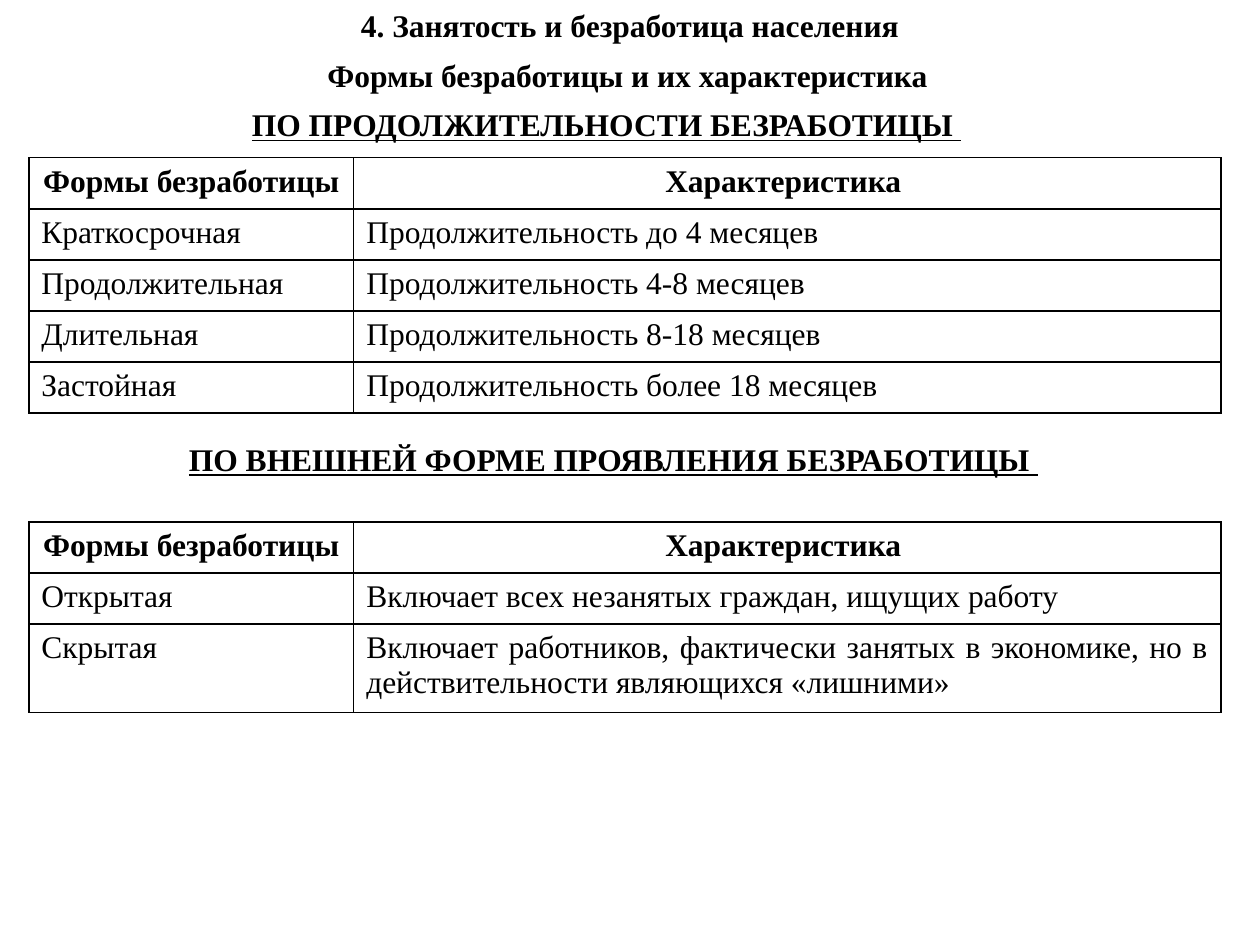
"""Builds a slide with two tables on the forms of unemployment."""
import pptx
import pptx.dml.color
import pptx.enum.text
import pptx.oxml
import pptx.oxml.ns
import pptx.util

Cm = pptx.util.Cm
Align = pptx.enum.text.PP_ALIGN
BLACK = pptx.dml.color.RGBColor(0x00, 0x00, 0x00)
WHITE = pptx.dml.color.RGBColor(0xFF, 0xFF, 0xFF)

SLIDE_WIDTH, LINE_HEIGHT = 25.4, 1.02
TABLE_LEFT, COLUMN_WIDTHS, ROW_HEIGHT = 0.58, (6.55, 17.48), 1.03
HEADER = ("Формы безработицы ", "Характеристика ")
DURATION_ROWS = [
    ("Краткосрочная", "Продолжительность до 4 месяцев \t"),
    ("Продолжительная", "Продолжительность 4-8 месяцев "),
    ("Длительная", "Продолжительность 8-18 месяцев "),
    ("Застойная", "Продолжительность более 18 месяцев "),
]
APPEARANCE_ROWS = [
    ("Открытая", "Включает всех незанятых граждан, ищущих работу "),
    ("Скрытая \t", "Включает работников, фактически занятых в экономике, "
                   "но в действительности являющихся «лишними» \t"),
]


class SlideBuilder:
    """Holds the text style and the current slide."""

    text_format = {"name": "Times New Roman", "size": pptx.util.Pt(18),
                   "bold": True, "underline": False}

    def __init__(self, slide):
        self.slide = slide

    def add_span(self, para, text, align, **changes):
        para.alignment = align
        span = para.add_run()
        span.text = text
        for name, value in {**self.text_format, **changes}.items():
            setattr(span.font, name, value)
        span.font.color.rgb = BLACK

    def title(self, text):
        box = self.slide.shapes.title
        place = {"left": 0, "top": 0, "width": Cm(SLIDE_WIDTH), "height": Cm(LINE_HEIGHT)}
        for name, value in place.items():
            setattr(box, name, value)
        frame = box.text_frame
        frame.auto_size = pptx.enum.text.MSO_AUTO_SIZE.NONE
        frame.vertical_anchor = pptx.enum.text.MSO_ANCHOR.TOP
        self.add_span(frame.paragraphs[0], text, Align.CENTER)

    def text(self, left, top, width, wrap):
        box = self.slide.shapes.add_textbox(Cm(left), Cm(top), Cm(width), Cm(LINE_HEIGHT))
        box.text_frame.word_wrap = wrap
        box.text_frame.auto_size = pptx.enum.text.MSO_AUTO_SIZE.SHAPE_TO_FIT_TEXT
        return box.text_frame.paragraphs[0]

    def subtitle(self, text, left, top, width):
        self.add_span(self.text(left, top, width, False), text, Align.LEFT)

    def heading(self, text, top):
        para = self.text(0, top, SLIDE_WIDTH, True)
        self.add_span(para, text, Align.CENTER, underline=True)
        self.add_span(para, "\t", Align.CENTER, name="Calibri", bold=False)

    def border(self, cell):
        properties = cell._tc.get_or_add_tcPr()
        for side in ("lnL", "lnR", "lnT", "lnB"):
            properties.append(pptx.oxml.parse_xml(
                f'<a:{side} {pptx.oxml.ns.nsdecls("a")} w="12700"><a:solidFill>'
                f'<a:srgbClr val="{BLACK}"/></a:solidFill></a:{side}>'))

    def table(self, rows, top, last_height=ROW_HEIGHT):
        heights = [ROW_HEIGHT] * len(rows) + [last_height]
        table = self.slide.shapes.add_table(
            len(heights), len(COLUMN_WIDTHS), Cm(TABLE_LEFT), Cm(top),
            Cm(sum(COLUMN_WIDTHS)), Cm(sum(heights))).table
        for column, width in zip(table.columns, COLUMN_WIDTHS):
            column.width = Cm(width)
        for row, height in zip(table.rows, heights):
            row.height = Cm(height)
        for row_number, texts in enumerate([HEADER, *rows]):
            is_header = row_number == 0
            for column_number, text in enumerate(texts):
                cell = table.cell(row_number, column_number)
                align = Align.CENTER if is_header else (Align.LEFT, Align.JUSTIFY)[column_number]
                self.border(cell)
                cell.fill.solid()
                cell.fill.fore_color.rgb = WHITE
                self.add_span(cell.text_frame.paragraphs[0], text, align, bold=is_header)


def main():
    deck = pptx.Presentation()
    deck.slide_width, deck.slide_height = Cm(SLIDE_WIDTH), Cm(19.05)
    builder = SlideBuilder(deck.slides.add_slide(deck.slide_layouts.get_by_name("Title Only")))
    builder.title("4. Занятость и безработица населения")
    builder.subtitle("Формы безработицы и их характеристика", 6.35, 1, 12.9)
    builder.heading("ПО ПРОДОЛЖИТЕЛЬНОСТИ БЕЗРАБОТИЦЫ ", 2)
    builder.table(DURATION_ROWS, 3.18)
    builder.heading("ПО ВНЕШНЕЙ ФОРМЕ ПРОЯВЛЕНИЯ БЕЗРАБОТИЦЫ ", 8.74)
    builder.table(APPEARANCE_ROWS, 10.52, last_height=1.78)
    deck.save("out.pptx")


if __name__ == "__main__":
    main()
